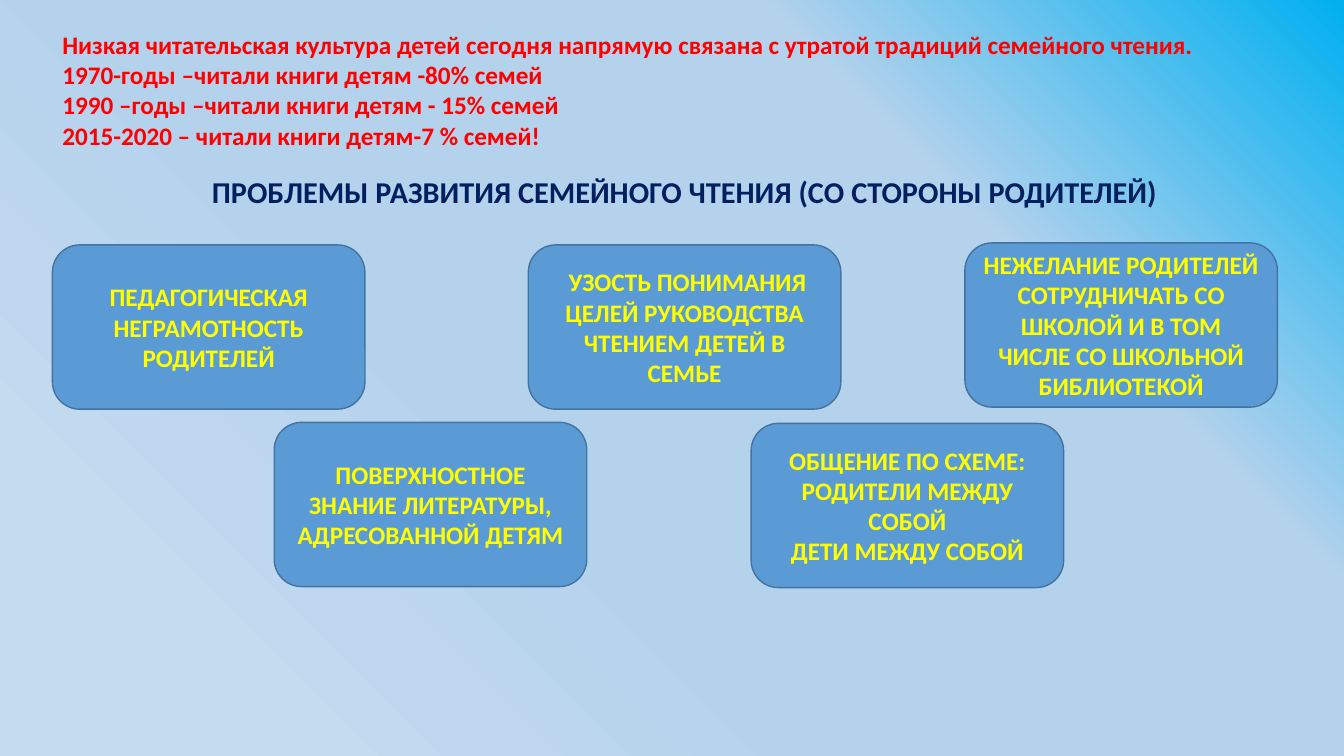
from pptx import Presentation
from pptx.dml.color import RGBColor
from pptx.enum.shapes import MSO_SHAPE
from pptx.enum.text import MSO_ANCHOR, MSO_AUTO_SIZE, PP_ALIGN
from pptx.oxml.ns import qn
from pptx.util import Inches, Pt
from lxml.etree import SubElement

STOPS = [(0, "00B0F0"), (28, "B5D2EC"), (61, "B5D2EC"), (85, "C4DBF0")]
FACTS = [
    "Низкая читательская культура детей сегодня напрямую связана с утратой традиций семейного чтения.",
    "1970-годы –читали книги детям -80% семей",
    "1990 –годы –читали книги детям - 15% семей",
    "2015-2020 – читали книги детям-7 % семей!",
]
CARDS = [
    (0.52, 2.43, ["ПЕДАГОГИЧЕСКАЯ НЕГРАМОТНОСТЬ РОДИТЕЛЕЙ"]),
    (2.72, 4.19, ["ПОВЕРХНОСТНОЕ ЗНАНИЕ ЛИТЕРАТУРЫ, АДРЕСОВАННОЙ ДЕТЯМ"]),
    (5.24, 2.43, [" УЗОСТЬ ПОНИМАНИЯ ЦЕЛЕЙ РУКОВОДСТВА ЧТЕНИЕМ ДЕТЕЙ В СЕМЬЕ"]),
    (7.45, 4.2, ["ОБЩЕНИЕ ПО СХЕМЕ:", "РОДИТЕЛИ МЕЖДУ СОБОЙ", "ДЕТИ МЕЖДУ СОБОЙ"]),
    (9.57, 2.41, ["НЕЖЕЛАНИЕ РОДИТЕЛЕЙ СОТРУДНИЧАТЬ СО ШКОЛОЙ И В ТОМ ЧИСЛЕ СО ШКОЛЬНОЙ БИБЛИОТЕКОЙ"]),
]


def color(code):
    return RGBColor.from_string(code)


def write(shape, lines, size, code, align, anchor):
    frame = shape.text_frame
    frame.word_wrap = True
    frame.vertical_anchor = anchor
    for i, line in enumerate(lines):
        para = frame.paragraphs[0] if i == 0 else frame.add_paragraph()
        para.alignment = align
        run = para.add_run()
        run.text = line
        font = run.font
        font.name, font.size, font.bold = "Calibri", Pt(size), True
        font.color.rgb = color(code)
    return frame


def paint(slide):
    """Fill the background with the diagonal gradient."""
    fill = slide.background.fill
    fill.gradient()
    fill.gradient_angle = 225
    stops = next(slide.element.iter(qn("a:gsLst")))
    for stop in list(stops):
        stops.remove(stop)
    for place, code in STOPS:
        stop = SubElement(stops, qn("a:gs"), pos=str(place * 1000))
        SubElement(stop, qn("a:srgbClr"), val=code)


def add_title(slide, text):
    title = slide.shapes.title
    title.left, title.top = Inches(1.04), Inches(1.55)
    title.width, title.height = Inches(11.5), Inches(0.74)
    frame = write(title, [text], 21.6, "002060", PP_ALIGN.CENTER, MSO_ANCHOR.MIDDLE)
    frame.auto_size = MSO_AUTO_SIZE.NONE
    frame.paragraphs[0].line_spacing = 0.9


def add_facts(slide):
    box = slide.shapes.add_textbox(Inches(0.52), Inches(0.24), Inches(12.33), Inches(1.31))
    frame = write(box, FACTS, 18, "FF0000", PP_ALIGN.LEFT, MSO_ANCHOR.TOP)
    frame.auto_size = MSO_AUTO_SIZE.SHAPE_TO_FIT_TEXT


def add_card(slide, left, top, lines):
    card = slide.shapes.add_shape(MSO_SHAPE.ROUNDED_RECTANGLE, Inches(left), Inches(top),
                                  Inches(3.1), Inches(1.63))
    card.shadow.inherit = False
    card.fill.solid()
    card.fill.fore_color.rgb = color("5B9BD5")
    card.line.color.rgb = color("43739E")
    card.line.width = Pt(1)
    write(card, lines, 18, "FFFF00", PP_ALIGN.CENTER, MSO_ANCHOR.MIDDLE)


def main():
    deck = Presentation()
    deck.slide_width, deck.slide_height = Inches(13.33), Inches(7.5)
    slide = deck.slides.add_slide(deck.slide_layouts[5])
    paint(slide)
    add_title(slide, "ПРОБЛЕМЫ РАЗВИТИЯ СЕМЕЙНОГО ЧТЕНИЯ (СО СТОРОНЫ РОДИТЕЛЕЙ)")
    add_facts(slide)
    for left, top, lines in CARDS:
        add_card(slide, left, top, lines)
    deck.save("out.pptx")


if __name__ == "__main__":
    main()
